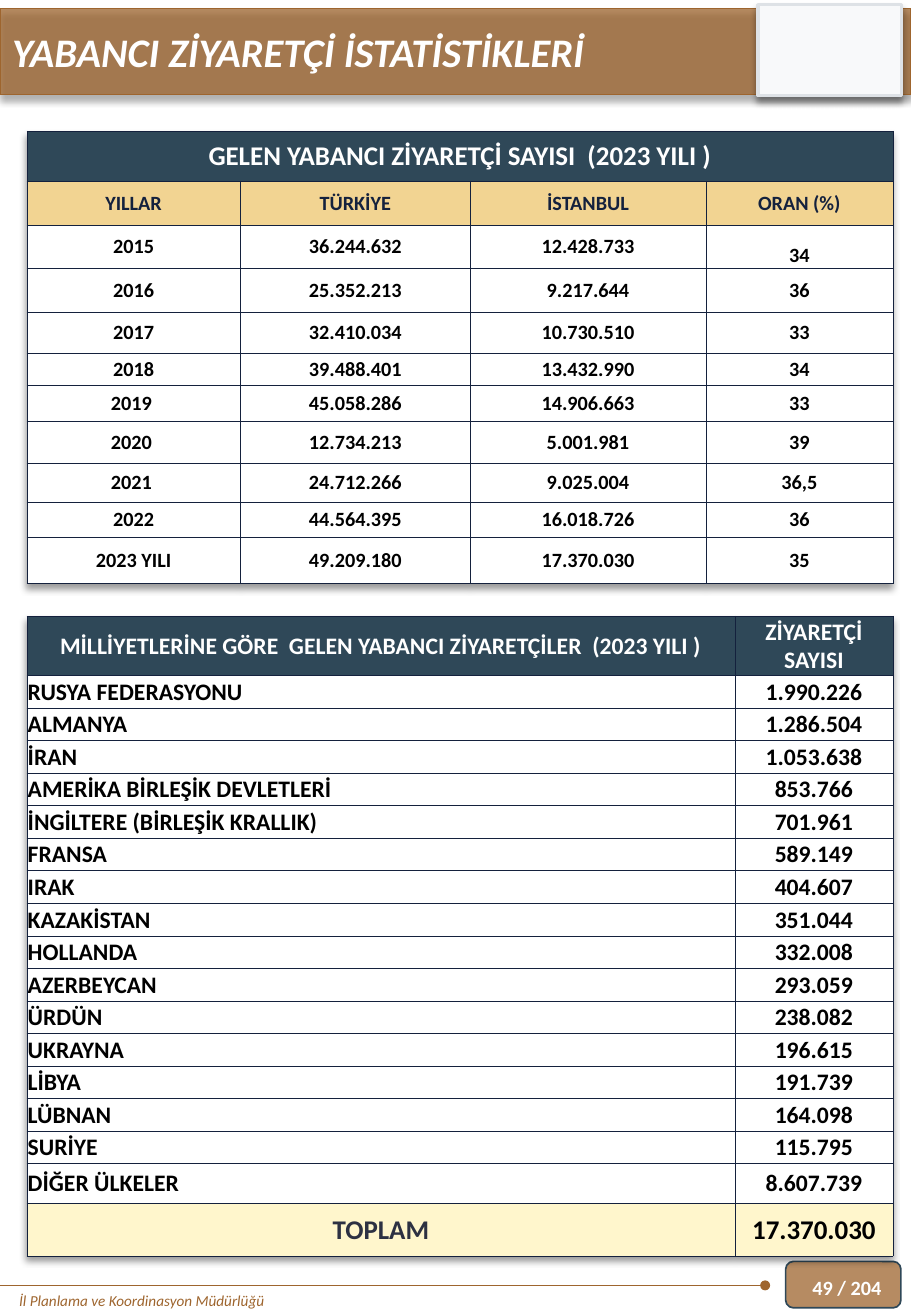
from pptx import Presentation
from pptx.dml.color import RGBColor
from pptx.enum.shapes import MSO_CONNECTOR, MSO_SHAPE
from pptx.enum.text import MSO_ANCHOR, MSO_AUTO_SIZE, PP_ALIGN
from pptx.oxml import parse_xml
from pptx.oxml.ns import nsdecls, qn
from pptx.util import Cm, Pt

RECT, ROUND_RECT = MSO_SHAPE.RECTANGLE, MSO_SHAPE.ROUNDED_RECTANGLE
STRAIGHT = MSO_CONNECTOR.STRAIGHT
TOP, MIDDLE, BOTTOM = MSO_ANCHOR.TOP, MSO_ANCHOR.MIDDLE, MSO_ANCHOR.BOTTOM
LEFT, CENTER = PP_ALIGN.LEFT, PP_ALIGN.CENTER
NO_AUTOSIZE = MSO_AUTO_SIZE.NONE

BROWN, NAVY, INK = "9E652E", "2F4858", "14213D"
WHITE, BLACK, SAND, CREAM = "FFFFFF", "000000", "F2D492", "FFF6CC"
NS = nsdecls("a")
EFFECTS = f"<a:effectLst {NS}/>"
SHADOW = (
    f'<a:outerShdw {NS} blurRad="50800" dist="38100" dir="5400000" algn="t" rotWithShape="0">'
    '<a:srgbClr val="000000"><a:alpha val="40000"/></a:srgbClr></a:outerShdw>'
)


def rgb(value):
    return RGBColor.from_string(value)


def add_grid(left, top, widths, heights, rows, style):
    frame = s.shapes.add_table(len(rows), len(widths), Cm(left), Cm(top),
                               Cm(sum(widths)), Cm(sum(heights)))
    table = frame.table
    table.horz_banding = False
    effects = parse_xml(EFFECTS)
    effects.append(parse_xml(SHADOW))
    table._tbl.tblPr.insert(0, effects)
    for column, width in zip(table.columns, widths):
        column.width = Cm(width)
    for i, (row, height) in enumerate(zip(rows, heights)):
        table.rows[i].height = Cm(height)
        for j, text in enumerate(row):
            size, color, fill, align = style(i, j)
            cell = table.cell(i, j)
            tcPr = cell._tc.get_or_add_tcPr()
            for side in ("lnL", "lnR", "lnT", "lnB"):
                tcPr.append(parse_xml(
                    f'<a:{side} {NS} w="3175"><a:solidFill><a:srgbClr val="{INK}"/>'
                    f'</a:solidFill></a:{side}>'))
            cell.fill.solid()
            cell.fill.fore_color.rgb = rgb(fill)
            cell.margin_left = cell.margin_right = cell.margin_top = Cm(0.02)
            cell.margin_bottom = Cm(0)
            cell.vertical_anchor = MIDDLE
            p = cell.text_frame.paragraphs[0]
            p.text = text
            p.alignment = align
            p.font.name, p.font.size, p.font.bold = "Calibri", Pt(size), True
            p.font.color.rgb = rgb(color)
    return table


prs = Presentation()
prs.slide_width, prs.slide_height = Cm(19.05), Cm(27.51)
s = prs.slides.add_slide(prs.slide_layouts[5])

panels = [
    (ROUND_RECT, 16.43, 26.37, 2.41, 0.97, BROWN, 75, NAVY, 1, False),
    (RECT, 0, 0.18, 19.05, 1.8, BROWN, 75, BROWN, 1, True),
    (RECT, 15.85, 0.1, 3, 1.9, "F8F9FA", 100, "DEE2E6", 2, True),
]
for shape, x, y, w, h, fill, opacity, line, weight, shaded in panels:
    sp = s.shapes.add_shape(shape, Cm(x), Cm(y), Cm(w), Cm(h))
    sp.fill.solid()
    sp.fill.fore_color.rgb = rgb(fill)
    if opacity < 100:
        color = sp._element.spPr.find(qn("a:solidFill"))[0]
        color.append(parse_xml(f'<a:alpha {NS} val="{opacity * 1000}"/>'))
    sp.line.color.rgb = rgb(line)
    sp.line.width = Pt(weight)
    sp.shadow.inherit = False
    if shaded:
        sp._element.spPr.find(qn("a:effectLst")).append(parse_xml(SHADOW))

rule = s.shapes.add_connector(STRAIGHT, Cm(16), Cm(26.87), Cm(0), Cm(26.87))
rule.line.color.rgb = rgb(BROWN)
rule.line.width = Pt(0.5)
rule.line._get_or_add_ln().append(parse_xml(f'<a:headEnd {NS} type="oval"/>'))
rule._element.spPr.append(parse_xml(EFFECTS))

title = s.shapes.title
title.left, title.top, title.width, title.height = Cm(0), Cm(0.43), Cm(19.05), Cm(1.27)
rule._element.addnext(title._element)
footer = s.shapes.add_textbox(Cm(0.15), Cm(26.87), Cm(11.91), Cm(0.64))
page = s.shapes.add_textbox(Cm(16.74), Cm(26.37), Cm(2.92), Cm(1.07))
labels = [
    (title, "YABANCI ZİYARETÇİ İSTATİSTİKLERİ", 24, WHITE, True, True, MIDDLE),
    (footer, "İl Planlama ve Koordinasyon Müdürlüğü", 9, BROWN, False, True, TOP),
    (page, "49 / 204", 12, WHITE, True, False, MIDDLE),
]
for sp, text, size, color, bold, italic, anchor in labels:
    tf = sp.text_frame
    tf.word_wrap = True
    tf.auto_size = NO_AUTOSIZE
    tf.vertical_anchor = anchor
    p = tf.paragraphs[0]
    p.text = text
    p.alignment = LEFT
    p.font.name, p.font.size = "Calibri", Pt(size)
    p.font.bold, p.font.italic = bold, italic
    p.font.color.rgb = rgb(color)

yearly_rows = [
    ("GELEN YABANCI ZİYARETÇİ SAYISI  (2023 YILI )", "", "", ""),
    ("YILLAR", "TÜRKİYE", "İSTANBUL", "ORAN (%)"),
    ("2015", "36.244.632", "12.428.733", "34"),
    ("2016", "25.352.213", "9.217.644", "36"),
    ("2017", "32.410.034", "10.730.510", "33"),
    ("2018", "39.488.401", "13.432.990", "34"),
    ("2019 ", "45.058.286", "14.906.663", "33"),
    ("2020 ", "12.734.213", "5.001.981", "39"),
    ("2021 ", "24.712.266", "9.025.004", "36,5"),
    ("2022", "44.564.395", "16.018.726", "36"),
    ("2023 YILI", "49.209.180", "17.370.030", "35"),
]
yearly_heads = {0: (16, WHITE, NAVY, CENTER), 1: (12, INK, SAND, CENTER)}
yearly = add_grid(
    0.56, 2.74, [4.47, 4.8, 4.93, 3.91],
    [1.04, 0.92, 0.9, 0.92, 0.86, 0.67, 0.75, 0.88, 0.81, 0.73, 0.98],
    yearly_rows, lambda i, j: yearly_heads.get(i, (12, BLACK, WHITE, CENTER)))
yearly.cell(0, 0).merge(yearly.cell(0, 3))
yearly.cell(2, 3).vertical_anchor = BOTTOM

nation_rows = [
    ("MİLLİYETLERİNE GÖRE  GELEN YABANCI ZİYARETÇİLER  (2023 YILI )", "ZİYARETÇİ SAYISI"),
    ("RUSYA FEDERASYONU", "1.990.226"),
    ("ALMANYA", "1.286.504"),
    ("İRAN", "1.053.638"),
    ("AMERİKA BİRLEŞİK DEVLETLERİ", "853.766"),
    ("İNGİLTERE (BİRLEŞİK KRALLIK)", "701.961"),
    ("FRANSA", "589.149"),
    ("IRAK", "404.607"),
    ("KAZAKİSTAN", "351.044"),
    ("HOLLANDA", "332.008"),
    ("AZERBEYCAN", "293.059"),
    ("ÜRDÜN", "238.082"),
    ("UKRAYNA", "196.615"),
    ("LİBYA", "191.739"),
    ("LÜBNAN", "164.098"),
    ("SURİYE", "115.795"),
    ("DİĞER ÜLKELER", "8.607.739"),
    ("TOPLAM", "17.370.030"),
]
nation_ends = {
    (0, 0): (14, WHITE, NAVY, CENTER),
    (0, 1): (14, WHITE, NAVY, CENTER),
    (17, 0): (16, "2D3142", CREAM, CENTER),
    (17, 1): (16, BLACK, CREAM, CENTER),
}
add_grid(
    0.56, 12.88, [14.81, 3.3], [1.24] + [0.68] * 15 + [0.83, 1.1], nation_rows,
    lambda i, j: nation_ends.get((i, j), (14, BLACK, WHITE, CENTER if j else LEFT)))

prs.save("out.pptx")
